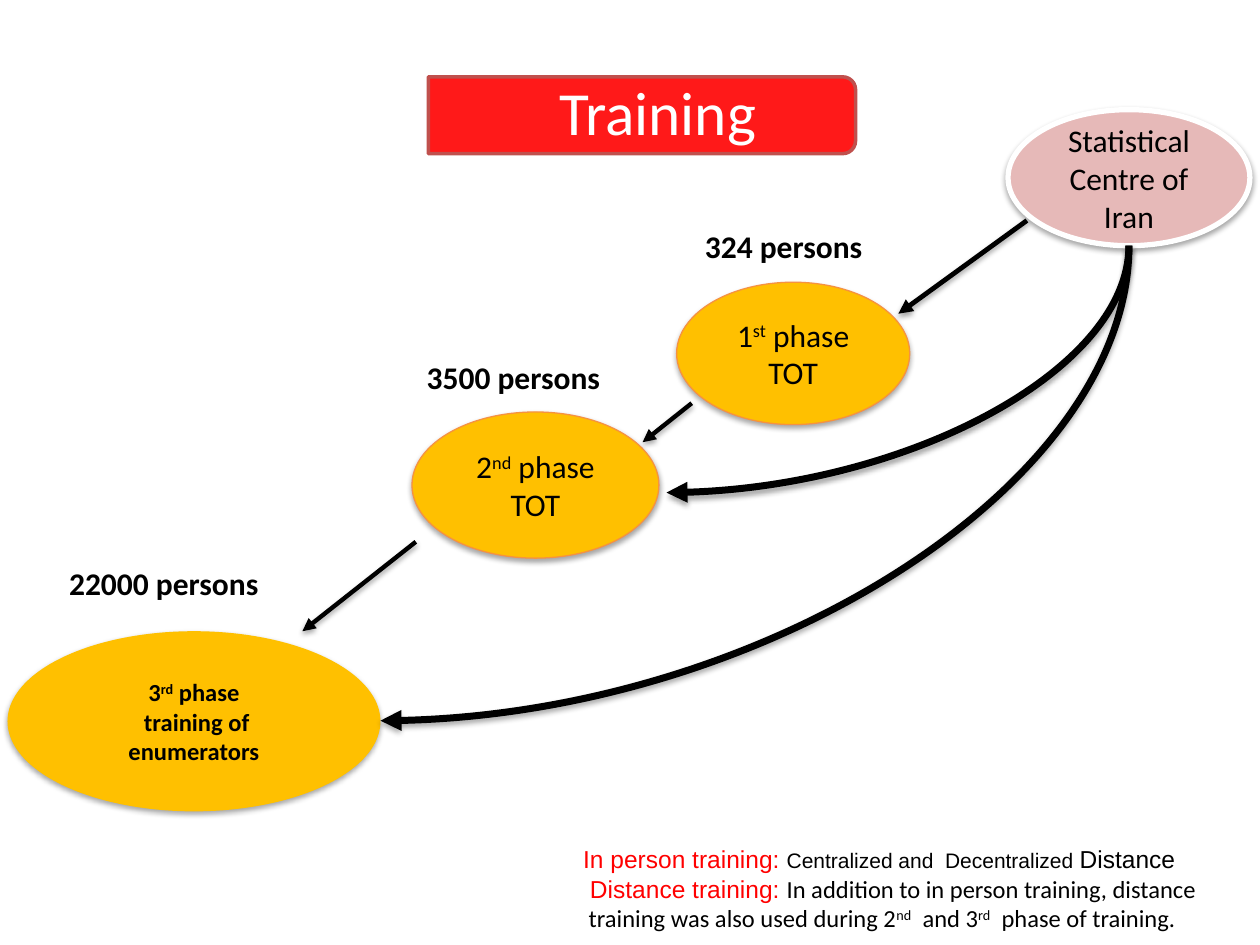
from lxml import etree
from pptx import Presentation
from pptx import util as u
from pptx.dml.color import RGBColor
from pptx.enum import shapes, text
from pptx.oxml.ns import qn

BLACK = RGBColor(0x00, 0x00, 0x00)
WHITE = RGBColor(0xFF, 0xFF, 0xFF)
RED = RGBColor(0xFF, 0x00, 0x00)
BRICK = RGBColor(0xC0, 0x50, 0x4D)
PINK = RGBColor(0xE6, 0xB9, 0xB8)
AMBER = RGBColor(0xFF, 0xC0, 0x00)
ORANGE = RGBColor(0xF6, 0x92, 0x40)
COLUMNS, ROWS = 10, 7.5

prs = Presentation()
prs.slide_width, prs.slide_height = u.Inches(COLUMNS), u.Inches(ROWS)
slide = prs.slides.add_slide(prs.slide_layouts[5])


def grid(*places):
    return [round(place * prs.slide_width / COLUMNS) for place in places]


def write(paragraph, wording, size, color=BLACK, name="Calibri", bold=False):
    for index, part in enumerate(wording.split("^")):
        run = paragraph.add_run()
        run.text = part
        run.font.size, run.font.name, run.font.bold = u.Pt(size), name, bold
        run.font.color.rgb = color
        if index % 2:
            run._r.get_or_add_rPr().set("baseline", "30000")


shadowed = []
stages = [
    ((8, 0.87, 1.92, 1.08), PINK, WHITE, 3, 18, ["Statistical Centre of Iran"]),
    ((5.37, 2.24, 1.85, 1.13), AMBER, ORANGE, 0.75, 18, ["1^st^ phase TOT"]),
    ((3.27, 3.27, 1.96, 1.16), AMBER, ORANGE, 0.75, 18, ["2^nd^ phase", "TOT"]),
    ((0.06, 5.01, 2.96, 1.43), AMBER, None, 0, 14, ["3^rd^ phase", " training of enumerators"]),
]
for place, fill, border, width, size, lines in stages:
    stage = slide.shapes.add_shape(shapes.MSO_SHAPE.OVAL, *grid(*place))
    stage.fill.solid()
    stage.fill.fore_color.rgb = fill
    if border is None:
        stage.line.fill.background()
    else:
        stage.line.color.rgb, stage.line.width = border, u.Pt(width)
    frame = stage.text_frame
    frame.vertical_anchor = text.MSO_ANCHOR.MIDDLE
    for index, wording in enumerate(lines):
        paragraph = frame.add_paragraph() if index else frame.paragraphs[0]
        paragraph.alignment = text.PP_ALIGN.CENTER
        write(paragraph, wording, size, bold=size == 14)
    shadowed.append(stage)

arrows = [
    ((8.15, 1.75), (7.13, 2.49), 2.75, False),
    ((8.96, 1.95), (3.02, 5.72), 4, True),
    ((5.49, 3.2), (5.1, 3.51), 2.5, False),
    ((3.3, 4.3), (2.4, 5.01), 2.5, False),
    ((8.96, 1.95), (5.29, 3.91), 4, True),
]
for (x1, y1), (x2, y2), width, curved in arrows:
    kind = shapes.MSO_CONNECTOR.STRAIGHT
    ends = (x1, y1, x2, y2)
    if curved:
        kind = shapes.MSO_CONNECTOR.CURVE
        middle_x, middle_y = (x1 + x2) / 2, (y1 + y2) / 2
        half_drop, half_run = (y2 - y1) / 2, (x1 - x2) / 2
        ends = (middle_x - half_drop, middle_y - half_run,
                middle_x + half_drop, middle_y + half_run)
    arrow = slide.shapes.add_connector(kind, *grid(*ends))
    if curved:
        arrow._element.spPr.find(qn("a:xfrm")).set("rot", "5400000")
        arrow._element.spPr.find(qn("a:prstGeom")).set("prst", "curvedConnector2")
    arrow.line.color.rgb, arrow.line.width = BLACK, u.Pt(width)
    etree.SubElement(arrow.line._get_or_add_ln(), qn("a:tailEnd"), type="triangle")
    shadowed.append(arrow)

for item in shadowed:
    effects = etree.SubElement(item._element.spPr, qn("a:effectLst"))
    shadow = etree.SubElement(effects, qn("a:outerShdw"), blurRad="40000",
                              dist="23000", dir="5400000", rotWithShape="0")
    shade = etree.SubElement(shadow, qn("a:srgbClr"), val="000000")
    etree.SubElement(shade, qn("a:alpha"), val="35000")

training_modes = slide.shapes.add_textbox(*grid(4.53, 6.65, 5.08, 0.81)).text_frame
training_modes.word_wrap = True
mode_lines = [
    [("In person training: ", 14, RED, "Arial"),
     ("Centralized and  Decentralized ", 12, BLACK, "Arial"),
     ("Distance", 14, BLACK, "Arial")],
    [(" Distance training: ", 14, RED, "Arial"),
     ("In addition to in person training, distance", 14)],
    [(" training was also used during 2^nd^  and 3^rd^  phase of training.", 14)],
]
for index, segments in enumerate(mode_lines):
    paragraph = training_modes.add_paragraph() if index else training_modes.paragraphs[0]
    for segment in segments:
        write(paragraph, *segment)

headcounts = [
    ("22000 persons", (0.44, 4.43, 1.72, 0.4)),
    ("3500 persons", (3.28, 2.79, 1.59, 0.4)),
    ("324 persons", (5.49, 1.75, 1.46, 0.4)),
]
for wording, place in headcounts:
    headcount = slide.shapes.add_textbox(*grid(*place)).text_frame
    headcount.word_wrap = False
    headcount.paragraphs[0].alignment = text.PP_ALIGN.CENTER
    write(headcount.paragraphs[0], wording, 18, bold=True)

banner = slide.shapes.add_shape(
    shapes.MSO_SHAPE.ROUND_2_SAME_RECTANGLE, *grid(4.79, -0.78, 0.61, 3.39))
banner.rotation = 90
banner.shadow.inherit = False
banner.fill.solid()
banner.fill.fore_color.rgb = RED
banner_color = banner._element.spPr.find(qn("a:solidFill"))[0]
etree.SubElement(banner_color, qn("a:alpha"), val="90000")
banner.line.color.rgb, banner.line.width = BRICK, u.Pt(2)

title = slide.shapes.title
slide.shapes._spTree.append(title._element)
title.left, title.top, title.width, title.height = grid(3.41, 0.64, 3.37, 0.55)
heading = title.text_frame
heading.auto_size = text.MSO_AUTO_SIZE.NONE
heading.vertical_anchor = text.MSO_ANCHOR.MIDDLE
heading.margin_left = u.Inches(0.27)
heading.margin_top = heading.margin_right = heading.margin_bottom = u.Inches(0.02)
heading.paragraphs[0].alignment = text.PP_ALIGN.CENTER
heading.paragraphs[0].line_spacing = 0.9
write(heading.paragraphs[0], "Training", 35, WHITE)

prs.save("out.pptx")
